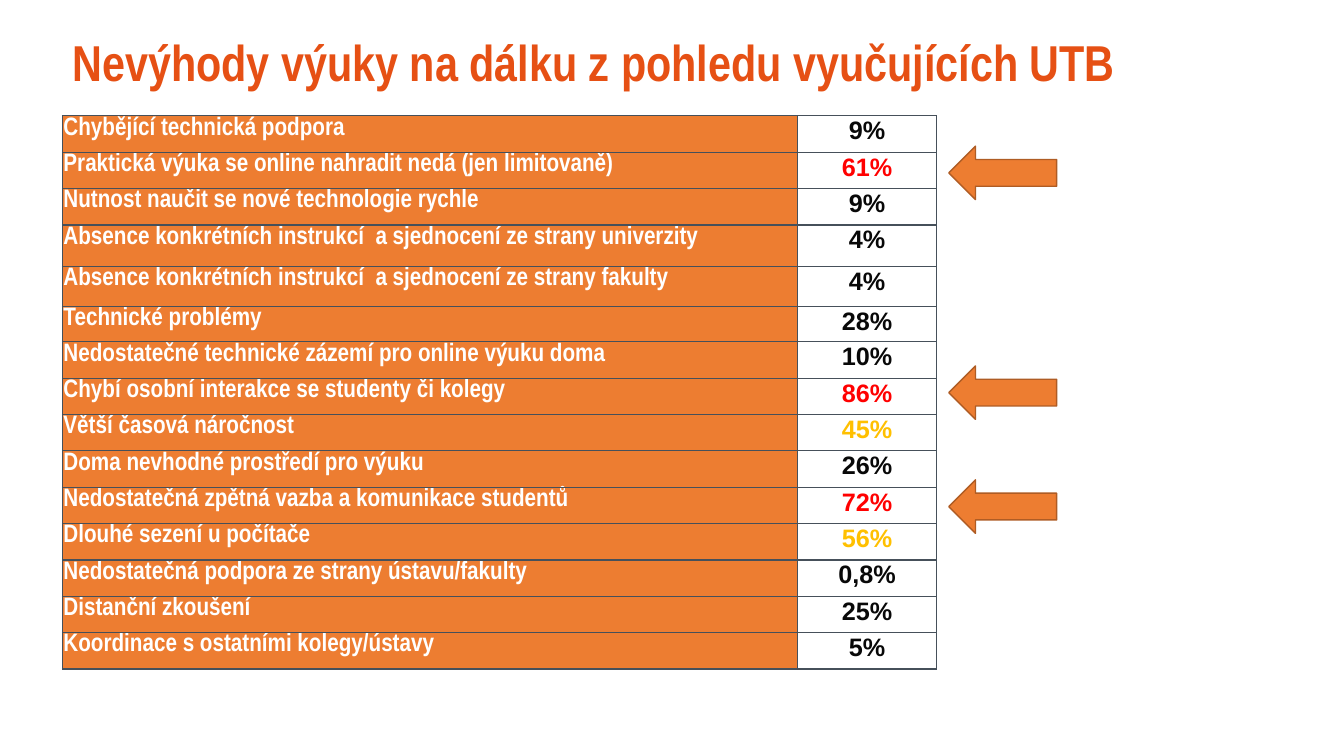
from typing import Any, NamedTuple

from lxml import etree
from pptx import Presentation
from pptx import util as u
from pptx.dml import color
from pptx.enum import shapes, text
from pptx.oxml import ns

SLIDE_WIDTH, SLIDE_HEIGHT = u.Inches(13.33), u.Inches(7.5)
ORANGE, WHITE, BLACK, RED, AMBER = "ED7D31", "FFFFFF", "080808", "FF0000", "FFC000"
TITLE_ORANGE, ARROW_EDGE, GRID_LINE = "E65014", "AF5C24", "46505A"
LEFT_EDGE = 4.65
ROW_HEIGHT = 4.81


class Drawback(NamedTuple):
    label: str
    share: str
    emphasis: str = BLACK
    height: float = ROW_HEIGHT


class Pointer(NamedTuple):
    top: float
    left: float = 70.59
    width: float = 8.03
    height: float = 7.07


DRAWBACKS = [
    Drawback("Chybějící technická podpora", "9%"),
    Drawback("Praktická výuka se online nahradit nedá (jen limitovaně)", "61%", RED),
    Drawback("Nutnost naučit se nové technologie rychle", "9%"),
    Drawback("Absence konkrétních instrukcí  a sjednocení ze strany univerzity", "4%", height=5.47),
    Drawback("Absence konkrétních instrukcí  a sjednocení ze strany fakulty", "4%", height=5.33),
    Drawback("Technické problémy", "28%", height=4.67),
    Drawback("Nedostatečné technické zázemí pro online výuku doma", "10%"),
    Drawback("Chybí osobní interakce se studenty či kolegy", "86%", RED),
    Drawback("Větší časová náročnost", "45%", AMBER),
    Drawback("Doma nevhodné prostředí pro výuku", "26%"),
    Drawback("Nedostatečná zpětná vazba a komunikace studentů", "72%", RED),
    Drawback("Dlouhé sezení u počítače", "56%", AMBER),
    Drawback("Nedostatečná podpora ze strany ústavu/fakulty", "0,8%"),
    Drawback("Distanční zkoušení", "25%"),
    Drawback("Koordinace s ostatními kolegy/ústavy", "5%"),
]
POINTERS = [Pointer(19.33), Pointer(48.4), Pointer(63.47)]
COLUMN_WIDTHS = [54.69, 10.35]


def across(percent: float) -> int:
    return u.Emu(round(SLIDE_WIDTH * percent / 100))


def down(percent: float) -> int:
    return u.Emu(round(SLIDE_HEIGHT * percent / 100))


def rgb(hex_value: str) -> color.RGBColor:
    return color.RGBColor.from_string(hex_value)


def apply_format(target: Any, values: dict[str, Any]) -> None:
    for attribute, value in values.items():
        setattr(target, attribute, value)


def paint(fill: Any, hex_value: str) -> None:
    fill.solid()
    fill.fore_color.rgb = rgb(hex_value)


def write(paragraph: Any, wording: str, font: str, size: float, hex_value: str) -> None:
    run = paragraph.add_run()
    run.text = wording
    apply_format(run.font, {"name": font, "size": u.Pt(size), "bold": True})
    run.font.color.rgb = rgb(hex_value)


def draw_title(slide: Any, wording: str) -> None:
    heading = slide.shapes.add_textbox(across(LEFT_EDGE), down(3.6), across(88.45), down(10))
    apply_format(heading.text_frame, {
        "word_wrap": True,
        "vertical_anchor": text.MSO_ANCHOR.MIDDLE,
    })
    line = heading.text_frame.paragraphs[0]
    line.line_spacing = 0.9
    write(line, wording, "Arial Narrow", 36, TITLE_ORANGE)


def outline_cell(cell: Any) -> None:
    properties = cell._tc.get_or_add_tcPr()
    for side in ("a:lnL", "a:lnR", "a:lnT", "a:lnB"):
        border = etree.SubElement(properties, ns.qn(side), w=str(u.Pt(1)))
        ink = etree.SubElement(border, ns.qn("a:solidFill"))
        etree.SubElement(ink, ns.qn("a:srgbClr"), val=GRID_LINE)


def fill_cell(cell: Any, wording: str, font: str, ink: str, background: str,
              alignment: text.PP_ALIGN) -> None:
    outline_cell(cell)
    paint(cell.fill, background)
    apply_format(cell, {
        "margin_left": u.Inches(0.01),
        "margin_right": u.Inches(0.01),
        "margin_top": u.Inches(0.01),
        "margin_bottom": 0,
        "vertical_anchor": text.MSO_ANCHOR.TOP,
    })
    line = cell.text_frame.paragraphs[0]
    line.alignment = alignment
    write(line, wording, font, 18, ink)


def draw_drawbacks(slide: Any, drawbacks: list[Drawback]) -> None:
    survey = slide.shapes.add_table(
        len(drawbacks), len(COLUMN_WIDTHS), across(LEFT_EDGE), down(15.33),
        across(sum(COLUMN_WIDTHS)), down(sum(item.height for item in drawbacks)),
    ).table
    apply_format(survey, {"first_row": False, "horz_banding": False})
    for column, width in zip(survey.columns, COLUMN_WIDTHS):
        column.width = across(width)
    for row, item in zip(survey.rows, drawbacks):
        row.height = down(item.height)
        label, share = row.cells
        fill_cell(label, item.label, "Arial Narrow", WHITE, ORANGE, text.PP_ALIGN.LEFT)
        fill_cell(share, item.share, "Arial", item.emphasis, WHITE, text.PP_ALIGN.CENTER)


def draw_pointer(slide: Any, pointer: Pointer) -> None:
    arrow = slide.shapes.add_shape(
        shapes.MSO_SHAPE.LEFT_ARROW, across(pointer.left), down(pointer.top),
        across(pointer.width), down(pointer.height),
    )
    arrow.shadow.inherit = False
    paint(arrow.fill, ORANGE)
    paint(arrow.line.fill, ARROW_EDGE)
    arrow.line.width = u.Pt(1)


def main() -> None:
    deck = Presentation()
    apply_format(deck, {"slide_width": SLIDE_WIDTH, "slide_height": SLIDE_HEIGHT})
    slide = deck.slides.add_slide(deck.slide_layouts[6])
    draw_title(slide, "Nevýhody výuky na dálku z pohledu vyučujících UTB")
    draw_drawbacks(slide, DRAWBACKS)
    for pointer in POINTERS:
        draw_pointer(slide, pointer)
    deck.save("out.pptx")


if __name__ == "__main__":
    main()
